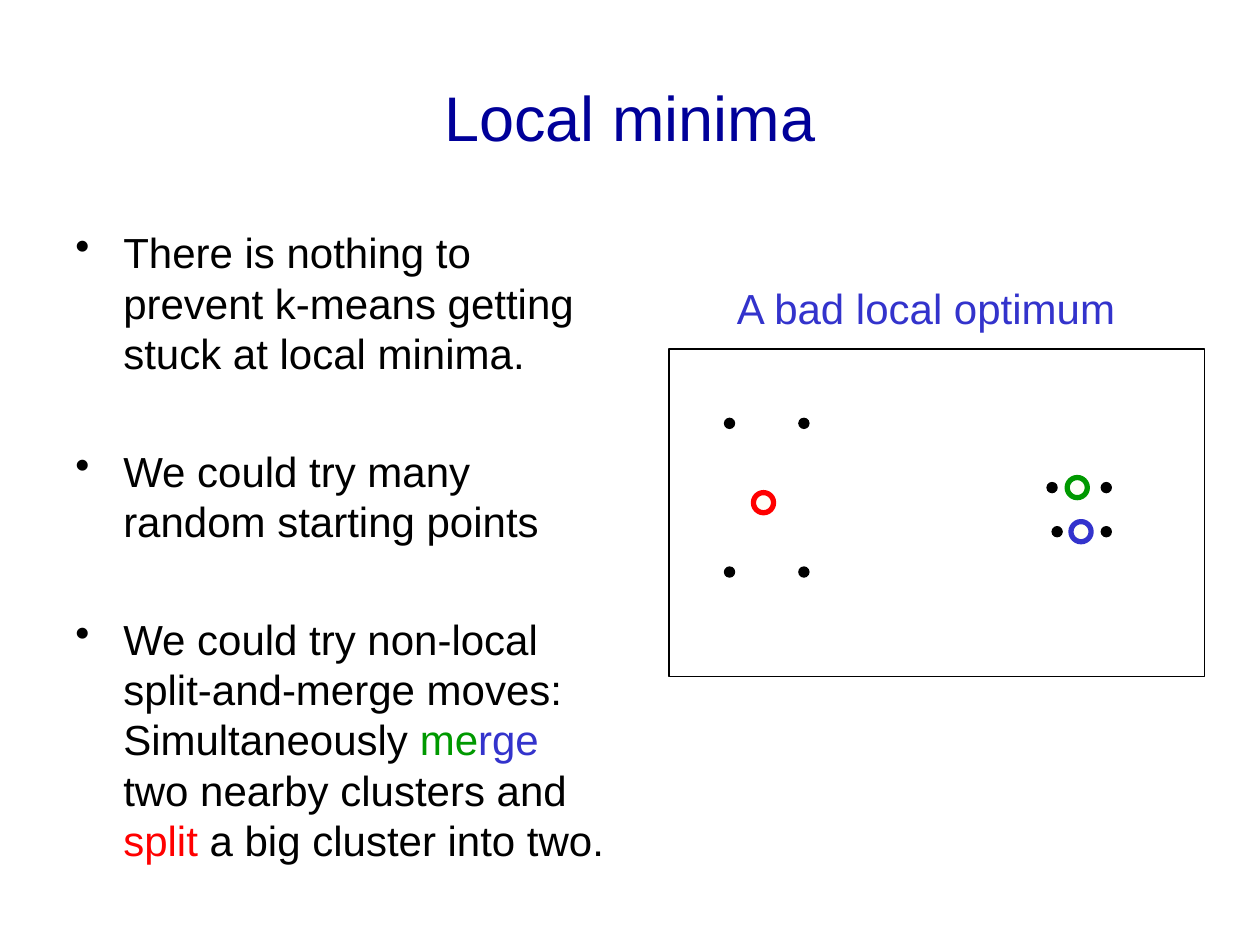
import pptx
import pptx.util
import pptx.dml.color
import pptx.enum.shapes
import pptx.enum.text
import pptx.oxml.ns
import lxml.etree
from dataclasses import dataclass

Inches = pptx.util.Inches
Pt = pptx.util.Pt
rgb = pptx.dml.color.RGBColor.from_string


@dataclass(frozen=True)
class Theme:
    font: str = "Arial"
    title_size: int = 36
    text_size: int = 24
    navy: str = "000099"
    black: str = "000000"
    green: str = "009900"
    blue: str = "3333CC"
    red: str = "FF0000"
    cream: str = "FFFFF7"


theme = Theme()
deck = pptx.Presentation()
deck.slide_width, deck.slide_height = Inches(10), Inches(7.5)
slide = deck.slides.add_slide(deck.slide_layouts[6])


def add_text(paragraphs, box, size=theme.text_size, align=pptx.enum.text.PP_ALIGN.LEFT,
             anchor=pptx.enum.text.MSO_ANCHOR.TOP, wrap=True, bullet=False):
    """Each paragraph is a list of (words, colour) runs."""
    frame = slide.shapes.add_textbox(*map(Inches, box)).text_frame
    frame.word_wrap = wrap
    frame.vertical_anchor = anchor
    for index, runs in enumerate(paragraphs):
        paragraph = frame.paragraphs[0] if index == 0 else frame.add_paragraph()
        paragraph.alignment = align
        if bullet:
            # Later points stand one blank line apart
            paragraph.space_before = Pt(38.4 if index else 4.8)
            properties = paragraph._p.get_or_add_pPr()
            properties.set("marL", str(Inches(0.38)))
            properties.set("indent", str(-Inches(0.38)))
            mark = lxml.etree.SubElement(properties, pptx.oxml.ns.qn("a:buChar"))
            mark.set("char", "•")
        for words, colour in runs:
            run = paragraph.add_run()
            run.text = words
            run.font.name = theme.font
            run.font.size = Pt(size)
            run.font.color.rgb = rgb(colour)


def add_outline(kind, box, line, width=0.75, fill=None):
    shape = slide.shapes.add_shape(kind, *map(Inches, box))
    shape.shadow.inherit = False
    shape.line.color.rgb = rgb(line)
    shape.line.width = Pt(width)
    if fill:
        shape.fill.solid()
        shape.fill.fore_color.rgb = rgb(fill)
    else:
        shape.fill.background()


# Title
add_text([[("Local minima", theme.navy)]], (0.5, 0.3, 9, 1.25), size=theme.title_size,
         align=pptx.enum.text.PP_ALIGN.CENTER, anchor=pptx.enum.text.MSO_ANCHOR.MIDDLE)

# Bullet points
points = [
    [("There is nothing to prevent k-means getting stuck at local minima.", theme.black)],
    [("We could try many random starting points", theme.black)],
    [("We could try non-local split-and-merge moves: Simultaneously ", theme.black),
     ("me", theme.green), ("rge", theme.blue),
     (" two nearby clusters and ", theme.black),
     ("split", theme.red), (" a big cluster into two.", theme.black)],
]
add_text(points, (0.5, 1.75, 4.42, 5.75), bullet=True)

# Frame of the example
add_outline(pptx.enum.shapes.MSO_SHAPE.RECTANGLE, (5.31, 2.77, 4.25, 2.6), theme.black)

# Data points: a wide cluster on the left, a tight one on the right
wide_cluster = [(x, y) for y in (3.32, 4.5) for x in (5.75, 6.34)]
tight_cluster = [(8.31, 3.83), (8.74, 3.83), (8.35, 4.18), (8.74, 4.18)]
for x, y in wide_cluster + tight_cluster:
    add_outline(pptx.enum.shapes.MSO_SHAPE.OVAL, (x, y, 0.08, 0.08), theme.black,
                fill=theme.black)

# Cluster centres
centres = [(5.98, 3.91, theme.red), (8.47, 3.79, theme.green), (8.5, 4.14, theme.blue)]
for x, y, colour in centres:
    add_outline(pptx.enum.shapes.MSO_SHAPE.OVAL, (x, y, 0.16, 0.16), colour, width=3,
                fill=theme.cream)

# Caption of the example
add_text([[("A bad local optimum", theme.blue)]], (5.75, 2.19, 3.22, 0.5), wrap=False)

deck.save("out.pptx")
